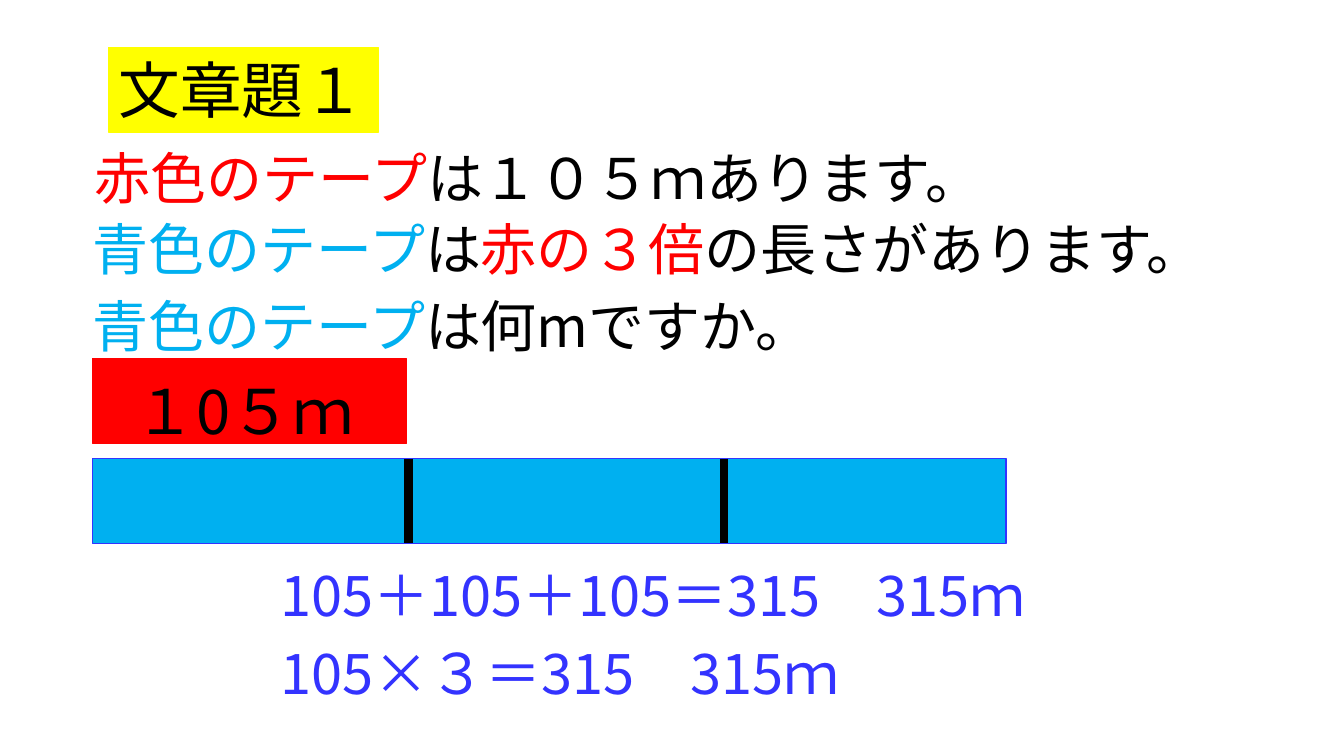
from dataclasses import dataclass

from lxml.etree import SubElement
from pptx import Presentation
from pptx.dml.color import RGBColor
from pptx.enum.lang import MSO_LANGUAGE_ID
from pptx.enum.shapes import MSO_CONNECTOR, MSO_SHAPE
from pptx.enum.text import MSO_ANCHOR, MSO_AUTO_SIZE, PP_ALIGN
from pptx.oxml.ns import qn
from pptx.util import Inches, Pt


@dataclass(frozen=True)
class Theme:
    font: str = "Noto Sans CJK JP"
    black: str = "000000"
    red: str = "FF0000"
    sky: str = "00B0F0"
    blue: str = "3333FF"
    yellow: str = "FFFF00"
    body_size: int = 40
    large_size: int = 44


THEME = Theme()


def rgb(color):
    return RGBColor.from_string(color)


def write_runs(shape, runs, size, wrap=True):
    """Fill a shape with one left-aligned line of (text, color) runs."""
    frame = shape.text_frame
    frame.word_wrap = wrap
    frame.auto_size = MSO_AUTO_SIZE.SHAPE_TO_FIT_TEXT
    frame.vertical_anchor = MSO_ANCHOR.TOP
    paragraph = frame.paragraphs[0]
    paragraph.alignment = PP_ALIGN.LEFT
    for text, color in runs:
        run = paragraph.add_run()
        run.text = text
        run.font.size = Pt(size)
        run.font.name = THEME.font
        run.font.language_id = MSO_LANGUAGE_ID.JAPANESE
        run.font.color.rgb = rgb(color)
        # East Asian characters take their own typeface entry
        SubElement(run.font._element, qn("a:ea")).set("typeface", THEME.font)


def add_text(slide, left, top, width, height, runs, size=THEME.body_size):
    box = slide.shapes.add_textbox(
        Inches(left), Inches(top), Inches(width), Inches(height))
    write_runs(box, runs, size)


def add_bar(slide, left, top, width, height, fill, line, line_width=1):
    bar = slide.shapes.add_shape(
        MSO_SHAPE.RECTANGLE,
        Inches(left), Inches(top), Inches(width), Inches(height))
    bar.shadow.inherit = False
    bar.fill.solid()
    bar.fill.fore_color.rgb = rgb(fill)
    bar.line.color.rgb = rgb(line)
    bar.line.width = Pt(line_width)
    return bar


def add_divider(slide, x, top, height):
    divider = slide.shapes.add_connector(
        MSO_CONNECTOR.STRAIGHT,
        Inches(x), Inches(top), Inches(x), Inches(top + height))
    divider.line.color.rgb = rgb(THEME.black)
    divider.line.width = Pt(6)
    SubElement(divider._element.spPr, qn("a:effectLst"))


def add_heading(slide, left, top, width, height):
    heading = add_bar(slide, left, top, width, height,
                      THEME.yellow, THEME.yellow, 0.75)
    write_runs(heading, [("文章題１", THEME.black)], THEME.large_size, wrap=False)


def add_problem(slide, left, top):
    """Three sentences, each in a box of its own width."""
    blue_tape = ("青色のテープ", THEME.sky)
    sentences = [
        (0.02, 0, 9.22, [("赤色のテープ", THEME.red),
                         ("は１０５ｍあります。", THEME.black)]),
        (0, 0.71, 11.31, [blue_tape, ("は", THEME.black),
                          ("赤の３倍", THEME.red),
                          ("の長さがあります。", THEME.black)]),
        (0, 1.47, 7.25, [blue_tape, ("は何mですか。", THEME.black)]),
    ]
    for indent, drop, width, runs in sentences:
        add_text(slide, left + indent, top + drop, width, 0.77, runs)


def add_tape_diagram(slide, left, top, width):
    """Red tape above a blue tape that is three units long."""
    height, unit = 0.84, 3.13
    blue_top = top + 0.99
    add_bar(slide, left, top, 3.11, height, THEME.red, THEME.red)
    add_bar(slide, left, blue_top, width, height, THEME.sky, THEME.blue)
    add_text(slide, left + 0.32, top + 0.09, 2.78, height,
             [("１0５ｍ", THEME.black)], THEME.large_size)
    for count in (1, 2):
        add_divider(slide, left + count * unit, blue_top, height)


def add_answers(slide, left, top):
    answers = [(8.93, "105＋105＋105＝315　315ｍ"), (6.74, "105×３＝315　315ｍ")]
    for row, (width, text) in enumerate(answers):
        add_text(slide, left, top + row * 0.78, width, 0.77, [(text, THEME.blue)])


def main():
    presentation = Presentation()
    presentation.slide_width = Inches(13.33)
    presentation.slide_height = Inches(7.5)
    slide = presentation.slides.add_slide(presentation.slide_layouts[6])
    add_problem(slide, 0.82, 1.37)
    add_tape_diagram(slide, 0.92, 3.56, 9.06)
    add_answers(slide, 2.68, 5.51)
    add_heading(slide, 1.08, 0.47, 2.67, 0.84)
    presentation.save("out.pptx")


if __name__ == "__main__":
    main()
